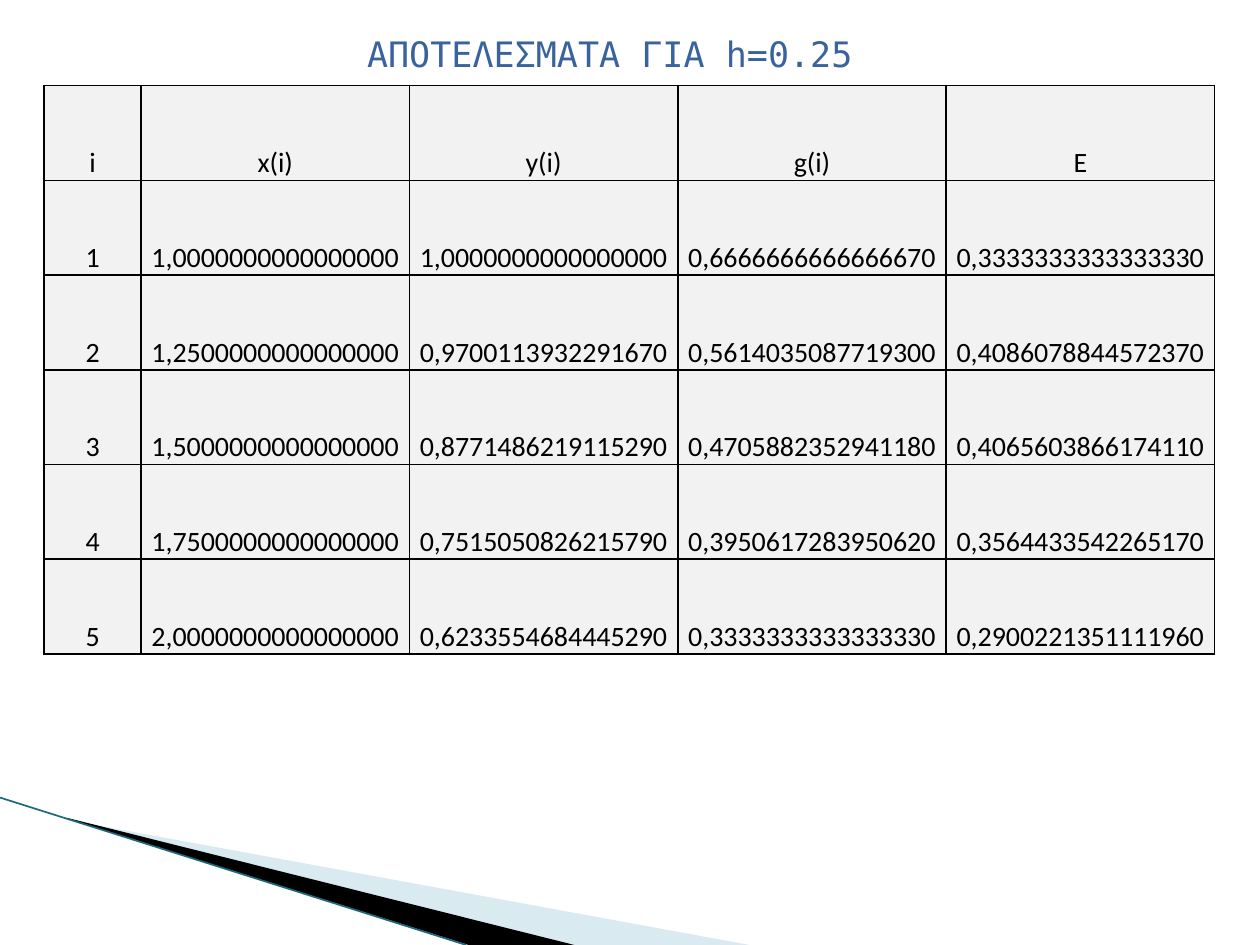
import dataclasses

import lxml.etree
import pptx
import pptx.dml.color
import pptx.enum.shapes
import pptx.enum.text
import pptx.oxml
import pptx.oxml.ns
import pptx.util

# The page is a grid of 100 columns by 75 rows of square units.
COLUMNS, ROWS = 100, 75
UNIT = pptx.util.Inches(0.1)


@dataclasses.dataclass(frozen=True)
class Theme:
    title_font: str = "DejaVu Sans Mono"
    table_font: str = "Calibri"
    title_size: float = 20
    table_size: float = 16
    border_width: float = 1
    edge_width: float = 0.95
    title: str = "39639D"
    ink: str = "000000"
    cell: str = "F2F2F2"
    pale_wedge: str = "A0CBDC"
    dark_wedge: str = "000000"
    edge: str = "1B6A7B"


@dataclasses.dataclass(frozen=True)
class Box:
    left: float
    top: float
    width: float
    height: float

    def lengths(self):
        return [grid(value) for value in dataclasses.astuple(self)]

    def point(self, column, row):
        return grid(self.left + column), grid(self.top + row)


THEME = Theme()
TITLE = "ΑΠΟΤΕΛΕΣΜΑΤΑ ΓΙΑ h=0.25"
RESULTS = [
    ["i", "x(i)", "y(i)", "g(i)", "E"],
    ["1", "1,0000000000000000", "1,0000000000000000", "0,6666666666666670", "0,3333333333333330"],
    ["2", "1,2500000000000000", "0,9700113932291670", "0,5614035087719300", "0,4086078844572370"],
    ["3", "1,5000000000000000", "0,8771486219115290", "0,4705882352941180", "0,4065603866174110"],
    ["4", "1,7500000000000000", "0,7515050826215790", "0,3950617283950620", "0,3564433542265170"],
    ["5", "2,0000000000000000", "0,6233554684445290", "0,3333333333333330", "0,2900221351111960"],
]


def grid(units):
    return round(units * UNIT)


def rgb(value):
    return pptx.dml.color.RGBColor.from_string(value)


def apply(target, values):
    for name, value in values.items():
        setattr(target, name, value)


def write(para, text, font, size, color):
    para.alignment = pptx.enum.text.PP_ALIGN.CENTER
    span = para.add_run()
    span.text = text
    apply(span.font, {"name": font, "size": pptx.util.Pt(size)})
    span.font.color.rgb = rgb(color)


def add_wedge(page, box, points, color, opacity=100):
    start, *rest = [box.point(*point) for point in points]
    builder = page.shapes.build_freeform(*start)
    builder.add_line_segments(rest, close=True)
    wedge = builder.convert_to_shape()
    wedge.shadow.inherit = False
    wedge.fill.solid()
    wedge.fill.fore_color.rgb = rgb(color)
    wedge.line.fill.background()
    if opacity < 100:
        tint = wedge.fill._xPr.find(".//" + pptx.oxml.ns.qn("a:srgbClr"))
        alpha = lxml.etree.SubElement(tint, pptx.oxml.ns.qn("a:alpha"))
        alpha.set("val", str(opacity * 1000))


def add_corner(page, box):
    """Two wedges and an edge line rising from the bottom of the page."""
    bottom = box.height
    add_wedge(page, box, [(5.5, 1.8), (box.width, bottom), (45.6, bottom)],
              THEME.pale_wedge, opacity=40)
    add_wedge(page, box, [(5.3, 1.6), (45.6, bottom), (37.2, bottom), (5.4, 1.7)],
              THEME.dark_wedge)
    edge = page.shapes.add_connector(pptx.enum.shapes.MSO_CONNECTOR.STRAIGHT,
                                     *box.point(0, 0), *box.point(37, bottom))
    edge.line.color.rgb = rgb(THEME.edge)
    edge.line.width = pptx.util.Pt(THEME.edge_width)
    lxml.etree.SubElement(edge._element.spPr, pptx.oxml.ns.qn("a:effectLst"))


def add_title(page, box):
    frame = page.shapes.add_textbox(*box.lengths()).text_frame
    frame.word_wrap = True
    write(frame.paragraphs[0], TITLE, THEME.title_font, THEME.title_size, THEME.title)


def add_borders(cell):
    properties = cell._tc.get_or_add_tcPr()
    width = pptx.util.Pt(THEME.border_width)
    namespace = pptx.oxml.ns.nsdecls("a")
    for index, side in enumerate("LRTB"):
        properties.insert(index, pptx.oxml.parse_xml(
            f'<a:ln{side} {namespace} w="{width}"><a:solidFill>'
            f'<a:srgbClr val="{THEME.ink}"/></a:solidFill></a:ln{side}>'))


def add_results(page, box, index_width):
    """A narrow index column, then equal value columns."""
    row_count, column_count = len(RESULTS), len(RESULTS[0])
    table = page.shapes.add_table(row_count, column_count, *box.lengths()).table
    apply(table, {"first_row": False, "horz_banding": False})
    value_width = (box.width - index_width) / (column_count - 1)
    for index, column in enumerate(table.columns):
        column.width = grid(value_width if index else index_width)
    for row, values in zip(table.rows, RESULTS):
        row.height = grid(box.height / row_count)
        for cell, text in zip(row.cells, values):
            apply(cell, {
                "vertical_anchor": pptx.enum.text.MSO_ANCHOR.BOTTOM,
                "margin_left": grid(0.7), "margin_right": grid(0.7),
                "margin_top": 0, "margin_bottom": 0,
            })
            cell.fill.solid()
            cell.fill.fore_color.rgb = rgb(THEME.cell)
            add_borders(cell)
            para = cell.text_frame.paragraphs[0]
            para.line_spacing = 1.15
            write(para, text, THEME.table_font, THEME.table_size, THEME.ink)


def main():
    deck = pptx.Presentation()
    apply(deck, {"slide_width": grid(COLUMNS), "slide_height": grid(ROWS)})
    page = deck.slides.add_slide(deck.slide_layouts[6])
    add_corner(page, Box(0, 63.3, 59.5, ROWS - 63.3))
    add_title(page, Box(23.2, 2.1, 50.4, 4.4))
    add_results(page, Box(3.5, 6.8, 92.9, 45.1), index_width=7.7)
    deck.save("out.pptx")


if __name__ == "__main__":
    main()
